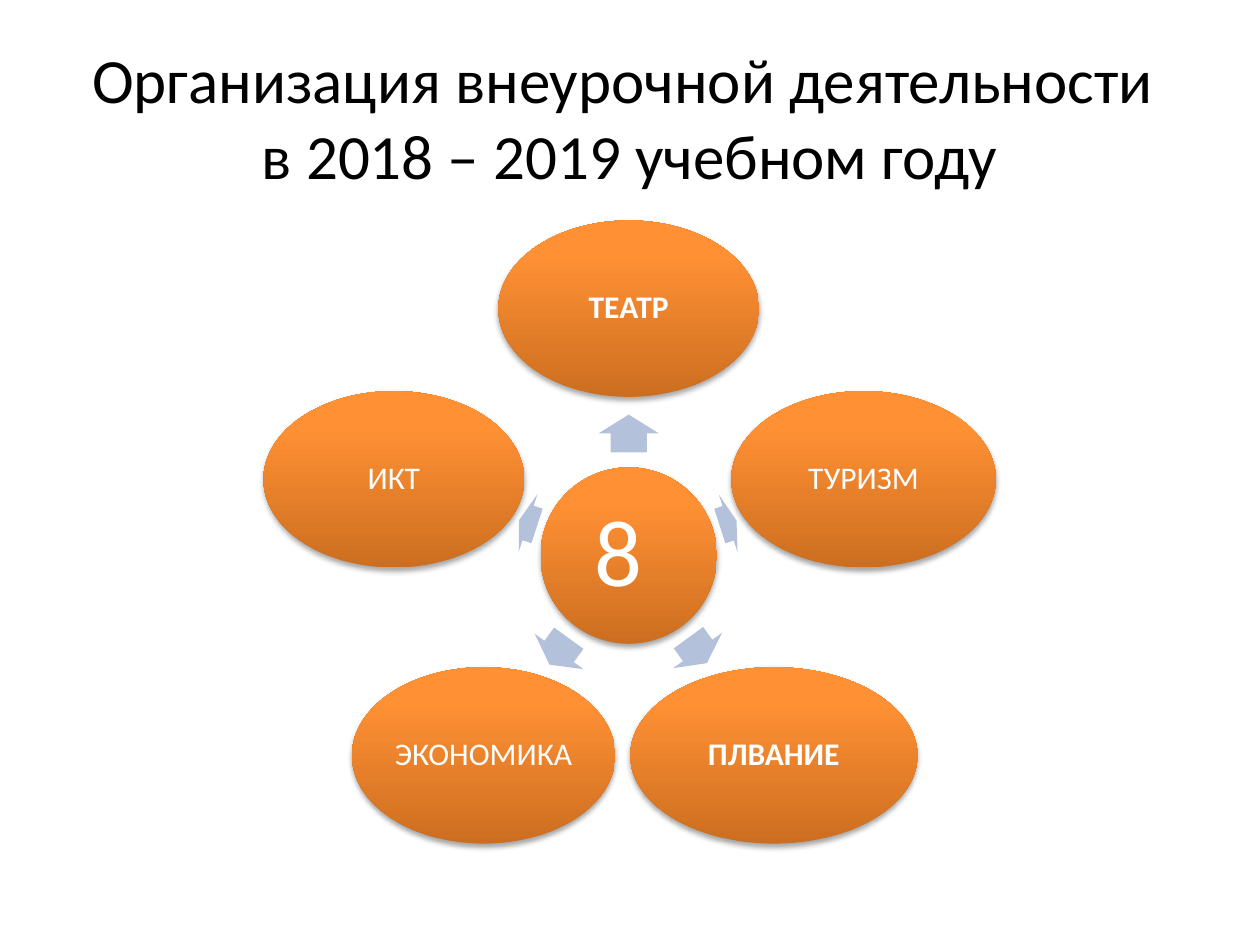
from copy import deepcopy
from math import cos, radians, sin

from lxml import etree
from pptx import Presentation
from pptx import util as u
from pptx.dml.color import RGBColor
from pptx.enum import shapes, text
from pptx.oxml import ns

HUES = {"ink": "000000", "white": "FFFFFF", "arrow": "B3C1DB",
        "dark": "CC6E20", "mid": "FF9034", "light": "FF9136"}
FONT = "Calibri"
MIDX, MIDY, RING = 4.99, 4.41, 1.96
HIGH = 1.4

deck = Presentation()
deck.slide_width, deck.slide_height = u.Inches(10), u.Inches(7.5)
slide = deck.slides.add_slide(deck.slide_layouts[6])


def write(para, words, size, hue, bold=False):
    run = para.add_run()
    run.text = words
    run.font.name, run.font.size, run.font.bold = FONT, u.Pt(size), bold
    run.font.color.rgb = RGBColor.from_string(HUES[hue])


def bubble(x, y, wide, words, size, inset, bold=False):
    oval = slide.shapes.add_shape(
        shapes.MSO_SHAPE.OVAL, u.Inches(x - wide / 2), u.Inches(y - HIGH / 2),
        u.Inches(wide), u.Inches(HIGH))
    oval.line.fill.background()

    # Three-stop gradient, dark at the bottom
    oval.fill.gradient()
    oval.fill.gradient_angle = 90
    stops = oval._element.spPr.find(".//" + ns.qn("a:gsLst"))
    stops.insert(1, deepcopy(stops[0]))
    for stop, spot, hue in zip(oval.fill.gradient_stops, (0, 0.8, 1),
                               ("dark", "mid", "light")):
        stop.position = spot
        stop.color.rgb = RGBColor.from_string(HUES[hue])

    # Soft shadow straight below
    oval.shadow.inherit = False
    glow = oval._element.spPr.find(ns.qn("a:effectLst"))
    cast = etree.SubElement(glow, ns.qn("a:outerShdw"), blurRad=str(u.Pt(3.1)),
                            dist=str(u.Pt(1.8)), dir="5400000", rotWithShape="0")
    tone = etree.SubElement(cast, ns.qn("a:srgbClr"), val=HUES["ink"])
    etree.SubElement(tone, ns.qn("a:alpha"), val="35000")

    # Label
    frame = oval.text_frame
    frame.word_wrap = True
    frame.vertical_anchor = text.MSO_ANCHOR.MIDDLE
    frame.margin_left = frame.margin_right = u.Inches(inset)
    frame.margin_top = frame.margin_bottom = u.Inches(inset)
    para = frame.paragraphs[0]
    para.alignment = text.PP_ALIGN.CENTER
    para.line_spacing = 0.9
    write(para, words, size, "white", bold)


# Title
box = slide.shapes.add_textbox(u.Inches(0.5), u.Inches(0.3), u.Inches(9), u.Inches(1.25))
frame = box.text_frame
frame.word_wrap = True
frame.vertical_anchor = text.MSO_ANCHOR.MIDDLE
para = frame.paragraphs[0]
para.alignment = text.PP_ALIGN.CENTER
write(para, "Организация внеурочной деятельности ", 36, "ink")
para.add_line_break()
write(para, "в 2018 – 2019 учебном году", 36, "ink")

# Hub
bubble(MIDX, MIDY, HIGH, "8 ", 54, 0.07)

# Spokes, clockwise from the top: label, width, bold, arrow length and distance
spokes = [
    ("ТЕАТР", 2.07, True, 0.3, 0.97),
    ("ТУРИЗМ", 2.1, False, 0.14, 0.83),
    ("ПЛВАНИЕ", 2.28, True, 0.25, 0.93),
    ("ЭКОНОМИКА", 2.09, False, 0.26, 0.94),
    ("ИКТ", 2.07, False, 0.15, 0.84),
]
for i, (words, wide, bold, long, far) in enumerate(spokes):
    turn = (270 + 72 * i) % 360
    dx, dy = cos(radians(turn)), sin(radians(turn))
    arrow = slide.shapes.add_shape(
        shapes.MSO_SHAPE.RIGHT_ARROW,
        u.Inches(MIDX + far * dx - long / 2), u.Inches(MIDY + far * dy - 0.24),
        u.Inches(long), u.Inches(0.48))
    arrow.rotation = turn
    arrow.adjustments[0], arrow.adjustments[1] = 0.6, 0.5
    arrow.fill.solid()
    arrow.fill.fore_color.rgb = RGBColor.from_string(HUES["arrow"])
    arrow.line.fill.background()
    arrow.shadow.inherit = False
    bubble(MIDX + RING * dx, MIDY + RING * dy, wide, words, 18, 0.03, bold)

deck.save("out.pptx")
